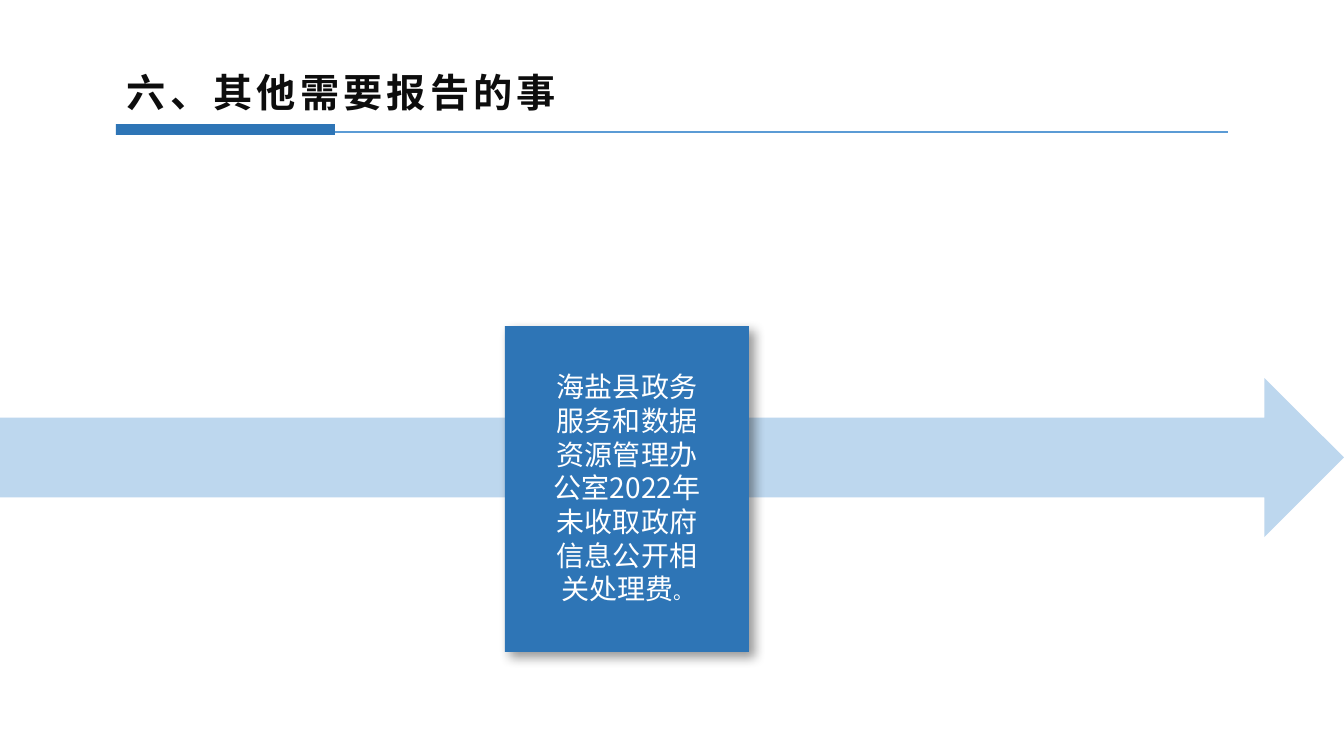
from lxml import etree
from pptx import Presentation
from pptx.dml.color import RGBColor
from pptx.enum.shapes import MSO_CONNECTOR, MSO_SHAPE
from pptx.enum.text import MSO_AUTO_SIZE, PP_ALIGN
from pptx.oxml.ns import qn
from pptx.util import Pt

RECT = MSO_SHAPE.RECTANGLE
ARROW = MSO_SHAPE.RIGHT_ARROW
STRAIGHT = MSO_CONNECTOR.STRAIGHT
GROW = MSO_AUTO_SIZE.SHAPE_TO_FIT_TEXT
LEFT = PP_ALIGN.LEFT
CENTER = PP_ALIGN.CENTER

FONT = "Noto Sans CJK SC"
BLUE = "2E75B6"
SKY = "5B9BD5"
PALE = "BDD7EE"
INK = "0D0D0D"
WHITE = "FFFFFF"
BLACK = "000000"


def px(count):
    return round(count * 914400 / 100.8)


def color(value):
    return RGBColor.from_string(value)


class Page:
    def __init__(self, deck):
        self.slide = deck.slides.add_slide(deck.slide_layouts[6])
        self.shapes = self.slide.shapes

    def shape(self, kind, box, fill):
        shape = self.shapes.add_shape(kind, *map(px, box))
        shape.shadow.inherit = False
        shape.fill.solid()
        shape.fill.fore_color.rgb = color(fill)
        shape.line.fill.background()
        return shape

    def shadow(self, shape, blur, dist, angle, alpha):
        effect = shape._element.spPr.find(qn("a:effectLst"))
        outer = etree.SubElement(
            effect, qn("a:outerShdw"), blurRad=str(Pt(blur)),
            dist=str(Pt(dist)), dir=str(angle * 60000),
            algn="tl", rotWithShape="0")
        tint = etree.SubElement(outer, qn("a:srgbClr"), val=BLACK)
        etree.SubElement(tint, qn("a:alpha"), val=str(alpha * 1000))

    def line(self, start, end, stroke, width):
        line = self.shapes.add_connector(
            STRAIGHT, *map(px, start + end))
        line.line.color.rgb = color(stroke)
        line.line.width = Pt(width)
        etree.SubElement(line._element.spPr, qn("a:effectLst"))

    def text(self, box, runs, size, fill, lead, align=LEFT,
             bold=False, wrap=True, track=0):
        frame = self.shapes.add_textbox(*map(px, box)).text_frame
        frame.word_wrap = wrap
        frame.auto_size = GROW
        para = frame.paragraphs[0]
        para.alignment = align
        para.line_spacing = Pt(lead)
        font = para.font
        font.name = FONT
        font.size = Pt(size)
        font.bold = bold
        font.color.rgb = color(fill)
        props = para._p.pPr.find(qn("a:defRPr"))
        props.set("spc", str(track * 100))
        etree.SubElement(props, qn("a:ea"), typeface=FONT)
        for words, own in runs:
            run = para.add_run()
            run.text = words
            if own:
                run.font.size = Pt(own)


def main():
    deck = Presentation()
    deck.slide_width = px(1344)
    deck.slide_height = px(756)
    page = Page(deck)

    page.shape(ARROW, (0, 378, 1344, 159), PALE)
    page.shape(RECT, (116, 124, 219, 11), BLUE)
    page.line((335, 132), (1228, 132), SKY, 1.75)
    page.text((117, 60, 457, 105), [("六、其他需要报告的事", None)],
              28, INK, 36, bold=True, wrap=False, track=3)

    card = page.shape(RECT, (505, 326, 244, 326), BLUE)
    page.shadow(card, 8, 5, 45, 40)
    words = "海盐县政务服务和数据资源管理办公室2022年未收取政府信息公开相关处理费"
    page.text((540, 365, 174, 248), [(words, None), ("。", 14)],
              20, WHITE, 24, align=CENTER)

    deck.save("out.pptx")


if __name__ == "__main__":
    main()
